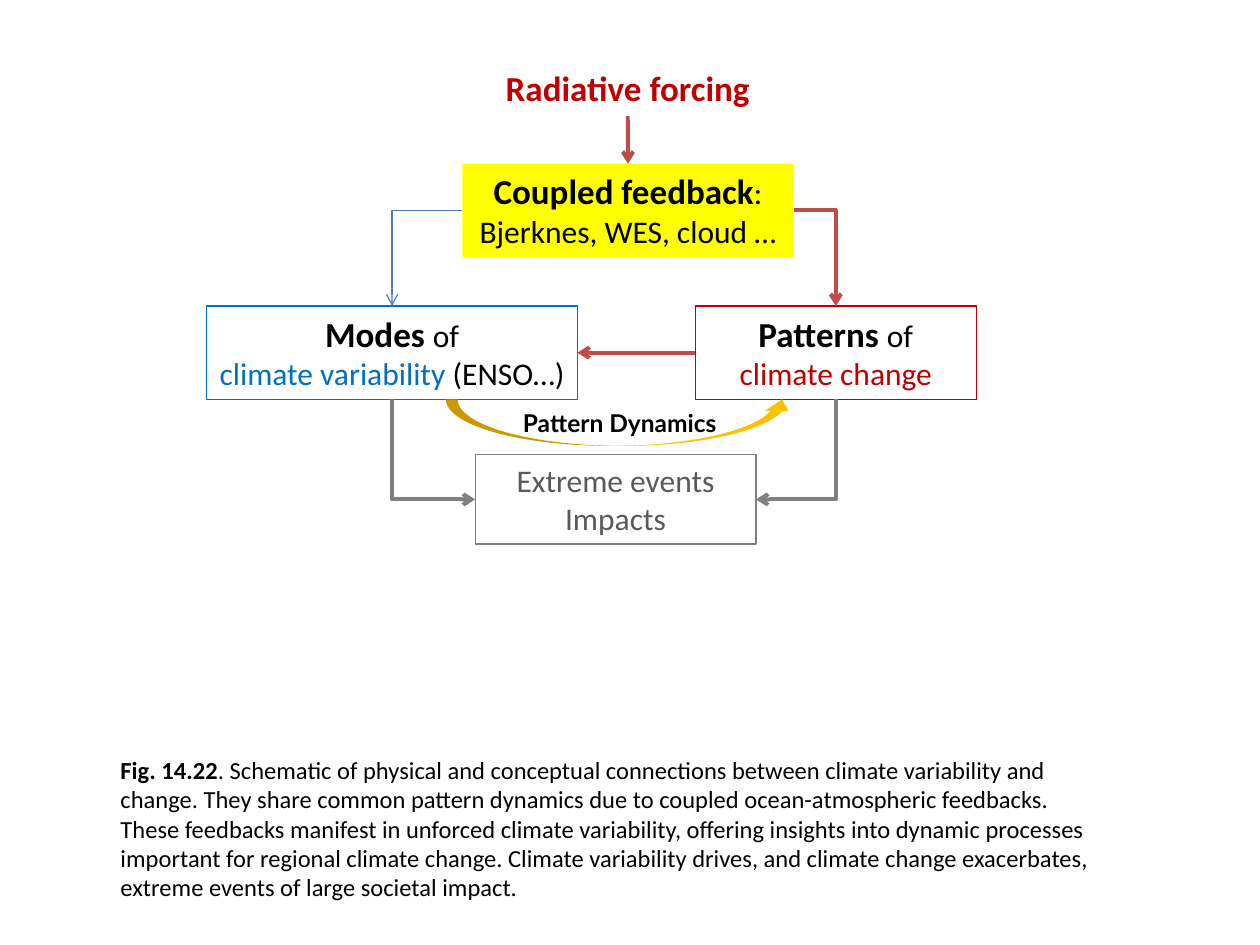
from lxml import etree
from pptx import Presentation
from pptx.dml.color import RGBColor
from pptx.enum.shapes import MSO_CONNECTOR, MSO_SHAPE
from pptx.enum.text import MSO_ANCHOR, MSO_AUTO_SIZE, PP_ALIGN
from pptx.oxml.ns import qn
from pptx.util import Cm, Pt

RECT, SWOOSH = MSO_SHAPE.RECTANGLE, MSO_SHAPE.CURVED_UP_ARROW
STRAIGHT, ELBOW = MSO_CONNECTOR.STRAIGHT, MSO_CONNECTOR.ELBOW
CENTER, LEFT_ALIGN = PP_ALIGN.CENTER, PP_ALIGN.LEFT
TOP_ANCHOR, MIDDLE_ANCHOR = MSO_ANCHOR.TOP, MSO_ANCHOR.MIDDLE
GROW, FIXED = MSO_AUTO_SIZE.SHAPE_TO_FIT_TEXT, MSO_AUTO_SIZE.NONE
TOP, LEFT, BOTTOM, RIGHT = range(4)  # connection sites of a rectangle

BLACK = RGBColor(0x00, 0x00, 0x00)
YELLOW = RGBColor(0xFF, 0xFF, 0x00)
GOLD = RGBColor(0xFF, 0xC0, 0x00)
BLUE = RGBColor(0x00, 0x70, 0xC0)
RED = RGBColor(0xC0, 0x00, 0x00)
GRAY = RGBColor(0x80, 0x80, 0x80)
DARK_GRAY = RGBColor(0x59, 0x59, 0x59)
BLUE_ARROW = RGBColor(0x4B, 0x7E, 0xBC)
RED_ARROW = RGBColor(0xBF, 0x4C, 0x48)

# Text formats
HEAD = {"size": Pt(20), "bold": True}
BODY = {"size": Pt(18), "bold": False}
CAPTION = {"size": Pt(14), "bold": False}
CAPTION_BOLD = {"size": Pt(14), "bold": True}
DYNAMICS = {"size": Pt(14), "bold": True, "name": "Lato"}


def write(part, paragraphs, align=CENTER, anchor=TOP_ANCHOR, auto_size=GROW):
    """Fill a shape with paragraphs, each a list of (text, format, colour) runs."""
    frame = part.text_frame
    frame.word_wrap = True
    frame.auto_size = auto_size
    frame.vertical_anchor = anchor
    for i, runs in enumerate(paragraphs):
        paragraph = frame.paragraphs[0] if i == 0 else frame.add_paragraph()
        paragraph.alignment = align
        for text, text_format, color in runs:
            run = paragraph.add_run()
            run.text = text
            for key, value in {"name": "Calibri", **text_format}.items():
                setattr(run.font, key, value)
            run.font.color.rgb = color


prs = Presentation()
prs.slide_width, prs.slide_height = Cm(25.4), Cm(19.05)
slide = prs.slides.add_slide(prs.slide_layouts[6])
shapes = slide.shapes

# Forcing at the top
forcing = shapes.add_textbox(Cm(9.19), Cm(1.22), Cm(6.93), Cm(1.12))
write(forcing, [[("Radiative forcing", HEAD, RED)]])

# Boxes: position and size, fill, outline, text
box_rows = {
    "coupled": ((9.32, 3.3, 6.68, 1.88), YELLOW, None, [
        [("Coupled feedback", HEAD, BLACK), (":", BODY, BLACK)],
        [("Bjerknes, WES, cloud …", BODY, BLACK)]]),
    "modes": ((4.17, 6.17, 7.47, 1.88), None, BLUE, [
        [("Modes ", HEAD, BLACK), ("of", BODY, BLACK)],
        [("climate variability ", BODY, BLUE), ("(ENSO…)", BODY, BLACK)]]),
    "patterns": ((14.02, 6.17, 5.66, 1.88), None, RED, [
        [("Patterns ", HEAD, BLACK), ("of", BODY, BLACK)],
        [("climate change", BODY, RED)]]),
    "extremes": ((9.58, 9.17, 5.66, 1.8), None, GRAY, [
        [("Extreme events", BODY, DARK_GRAY)],
        [("Impacts", BODY, DARK_GRAY)]]),
}
boxes = {"forcing": forcing}
for key, (place, fill, outline, paragraphs) in box_rows.items():
    box = shapes.add_shape(RECT, *map(Cm, place))
    box.shadow.inherit = False
    if fill:
        box.fill.solid()
        box.fill.fore_color.rgb = fill
    else:
        box.fill.background()
    if outline:
        box.line.color.rgb = outline
        box.line.width = Pt(0.75)
    else:
        box.line.fill.background()
    write(box, paragraphs)
    boxes[key] = box

# Curved arrow from modes to patterns
dynamics = shapes.add_shape(SWOOSH, Cm(8.99), Cm(8.05), Cm(7.01), Cm(0.94))
dynamics.shadow.inherit = False
dynamics.fill.solid()
dynamics.fill.fore_color.rgb = GOLD
dynamics.line.fill.background()
write(dynamics, [[("Pattern Dynamics", DYNAMICS, BLACK)]],
      anchor=MIDDLE_ANCHOR, auto_size=FIXED)

# Connectors: an elbow leaves its first box sideways, so the two that point
# at the extremes box start there and carry the arrowhead at their beginning
links = [
    (STRAIGHT, "forcing", BOTTOM, "coupled", TOP, RED_ARROW, 2.25, "tailEnd"),
    (STRAIGHT, "patterns", LEFT, "modes", RIGHT, RED_ARROW, 2.25, "tailEnd"),
    (ELBOW, "coupled", LEFT, "modes", TOP, BLUE_ARROW, 0.75, "tailEnd"),
    (ELBOW, "coupled", RIGHT, "patterns", TOP, RED_ARROW, 2.25, "tailEnd"),
    (ELBOW, "extremes", LEFT, "modes", BOTTOM, GRAY, 2.25, "headEnd"),
    (ELBOW, "extremes", RIGHT, "patterns", BOTTOM, GRAY, 2.25, "headEnd"),
]
for kind, start, start_site, end, end_site, color, width, arrow_end in links:
    link = shapes.add_connector(kind, 0, 0, 0, 0)
    link.begin_connect(boxes[start], start_site)
    link.end_connect(boxes[end], end_site)
    link.line.color.rgb = color
    link.line.width = Pt(width)
    properties = link._element.spPr
    if kind == ELBOW:
        properties.find(qn("a:prstGeom")).set("prst", "bentConnector2")
    outline = properties.find(qn("a:ln"))
    etree.SubElement(outline, qn(f"a:{arrow_end}"), type="arrow")
    etree.SubElement(properties, qn("a:effectLst"))

# Caption
caption = shapes.add_textbox(Cm(2.18), Cm(15.09), Cm(20.04), Cm(3.25))
write(caption, [[
    ("Fig. 14.22", CAPTION_BOLD, BLACK),
    (". Schematic of physical and conceptual connections between climate "
     "variability and change. They share common pattern dynamics due to "
     "coupled ocean-atmospheric feedbacks. These feedbacks manifest in "
     "unforced climate variability, offering insights into dynamic processes "
     "important for regional climate change. Climate variability drives, and "
     "climate change exacerbates, extreme events of large societal impact.",
     CAPTION, BLACK)]], align=LEFT_ALIGN)

prs.save("out.pptx")
